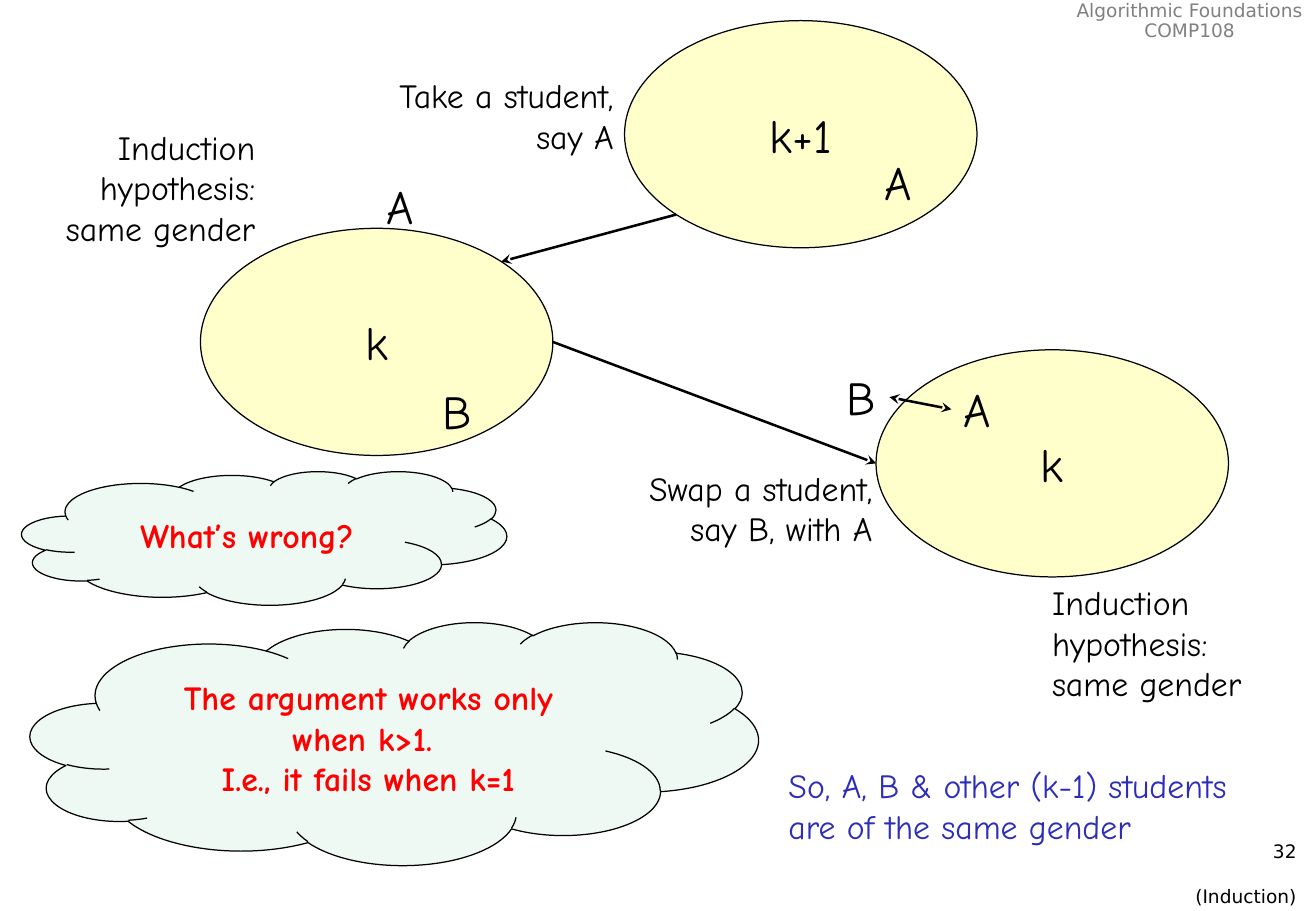
from dataclasses import dataclass
from math import cos, radians, sin

from lxml import etree
from pptx import Presentation
from pptx.dml.color import RGBColor
from pptx.enum.shapes import MSO_CONNECTOR as Connector, MSO_SHAPE as Preset
from pptx.enum.text import MSO_ANCHOR as Anchor, PP_ALIGN as Align
from pptx.oxml.ns import qn
from pptx.util import Inches, Pt


@dataclass(frozen=True)
class Theme:
    font: str = "Comic Neue"
    chrome_font: str = "DejaVu Sans"
    ink: str = "000000"
    muted: str = "808080"
    group_fill: str = "FFFFCC"
    cloud_fill: str = "EEF9F4"
    alert: str = "FF0000"
    conclusion: str = "2D2DB9"
    label_size: int = 28
    note_size: int = 20
    chrome_size: int = 11
    outline: float = 0.75
    arrow: float = 1.5


@dataclass(frozen=True)
class Box:
    left: float
    top: float
    width: float
    height: float

    def inches(self):
        return [Inches(v) for v in (self.left, self.top, self.width, self.height)]

    def point(self, dx, dy):
        return self.left + dx, self.top + dy

    def rim(self, degrees):
        angle = radians(degrees)
        return self.point(self.width / 2 * (1 + cos(angle)),
                          self.height / 2 * (1 - sin(angle)))


THEME = Theme()


def write(frame, paragraphs, size=THEME.note_size, color=THEME.ink,
          align=Align.LEFT, font=THEME.font, bold=False, wrap=False):
    frame.word_wrap = wrap
    for index, text in enumerate(paragraphs):
        paragraph = frame.paragraphs[0] if index == 0 else frame.add_paragraph()
        paragraph.alignment = align
        for number, line in enumerate(text.split("\n")):
            if number:
                paragraph.add_line_break()
            run = paragraph.add_run()
            run.text = line
            run.font.name = font
            run.font.size = Pt(size)
            run.font.bold = bold
            run.font.color.rgb = RGBColor.from_string(color)


def add_text(slide, box, paragraphs, **style):
    frame = slide.shapes.add_textbox(*box.inches()).text_frame
    write(frame, paragraphs, **style)
    return frame


def add_outlined(slide, preset, box, fill, paragraphs, **style):
    shape = slide.shapes.add_shape(preset, *box.inches())
    shape.shadow.inherit = False
    shape.fill.solid()
    shape.fill.fore_color.rgb = RGBColor.from_string(fill)
    shape.line.color.rgb = RGBColor.from_string(THEME.ink)
    shape.line.width = Pt(THEME.outline)
    shape.text_frame.vertical_anchor = Anchor.MIDDLE
    write(shape.text_frame, paragraphs, align=Align.CENTER, **style)


def add_group(slide, box, label, students):
    add_outlined(slide, Preset.OVAL, box, THEME.group_fill, [label],
                 size=THEME.label_size)
    for name, dx, dy in students:
        place = Box(*box.point(dx, dy), 0.49 if name == "A" else 0.45, 0.57)
        add_text(slide, place, [name], size=THEME.label_size)


def add_cloud(slide, box, text):
    add_outlined(slide, Preset.CLOUD, box, THEME.cloud_fill, [text],
                 color=THEME.alert, bold=True, wrap=True)


def add_arrow(slide, start, end, ends=("tailEnd",)):
    connector = slide.shapes.add_connector(
        Connector.STRAIGHT, *[Inches(v) for v in (*start, *end)])
    connector.line.color.rgb = RGBColor.from_string(THEME.ink)
    connector.line.width = Pt(THEME.arrow)
    outline = connector.line._get_or_add_ln()
    for tag in ends:
        etree.SubElement(outline, qn(f"a:{tag}"), type="stealth")
    etree.SubElement(connector._element.spPr, qn("a:effectLst"))


def add_header(slide, box):
    frame = add_text(slide, box, ["Algorithmic Foundations", "COMP108"],
                     size=THEME.chrome_size, color=THEME.muted,
                     align=Align.CENTER, font=THEME.chrome_font)
    for paragraph in frame.paragraphs:
        paragraph.line_spacing = 0.9


def add_footer(slide, box):
    frame = add_text(slide, box, ["32", "(Induction)"], size=THEME.chrome_size,
                     align=Align.RIGHT, font=THEME.chrome_font, wrap=True)
    frame.paragraphs[1].space_before = Pt(13)


def add_diagram(slide, box):
    def group_box(dx, dy):
        return Box(*box.point(dx, dy), 2.9, 1.87)

    whole, without_a, swapped = group_box(5.14, 0.17), group_box(1.65, 1.88), group_box(7.21, 2.88)
    add_group(slide, whole, "k+1", [("A", 2.04, 1.04)])
    add_group(slide, without_a, "k", [("A", 1.43, -0.47), ("B", 1.89, 1.22)])
    add_group(slide, swapped, "k", [("A", 0.62, 0.2), ("B", -0.34, 0.1)])

    add_arrow(slide, whole.rim(225), without_a.rim(45))
    add_arrow(slide, without_a.rim(0), swapped.rim(180))
    add_arrow(slide, swapped.point(0.11, 0.39), swapped.point(0.62, 0.49),
              ("headEnd", "tailEnd"))

    hypothesis = ["Induction hypothesis:", "same gender"]
    add_text(slide, Box(*box.point(2.91, 0.57), 2.24, 0.77),
             ["Take a student,\nsay A"], align=Align.RIGHT)
    add_text(slide, Box(*box.point(0, 0.99), 2.2, 1.11),
             hypothesis, align=Align.RIGHT, wrap=True)
    add_text(slide, Box(*box.point(8.56, 4.74), 2.27, 1.11), hypothesis, wrap=True)
    add_text(slide, Box(*box.point(5, 3.8), 2.28, 0.77),
             ["Swap a student,", "say B, with A"], align=Align.RIGHT)


def add_conclusion(slide, box):
    add_text(slide, box,
             ["So, A, B & other (k-1) students", "are of the same gender"],
             color=THEME.conclusion)


def main():
    presentation = Presentation()
    presentation.slide_width = Inches(10.83)
    presentation.slide_height = Inches(7.5)
    slide = presentation.slides.add_slide(presentation.slide_layouts[6])
    add_header(slide, Box(8.75, -0.04, 2.08, 0.43))
    add_footer(slide, Box(8.51, 6.87, 2.26, 0.5))
    add_diagram(slide, Box(0, 0, 10.83, 5.85))
    add_conclusion(slide, Box(6.39, 6.25, 4.21, 0.77))
    add_cloud(slide, Box(0.25, 5.12, 5.99, 2),
              "The argument works only when k>1. \nI.e., it fails when k=1")
    add_cloud(slide, Box(0.18, 3.88, 3.99, 1.1), "What’s wrong?")
    presentation.save("out.pptx")


if __name__ == "__main__":
    main()
